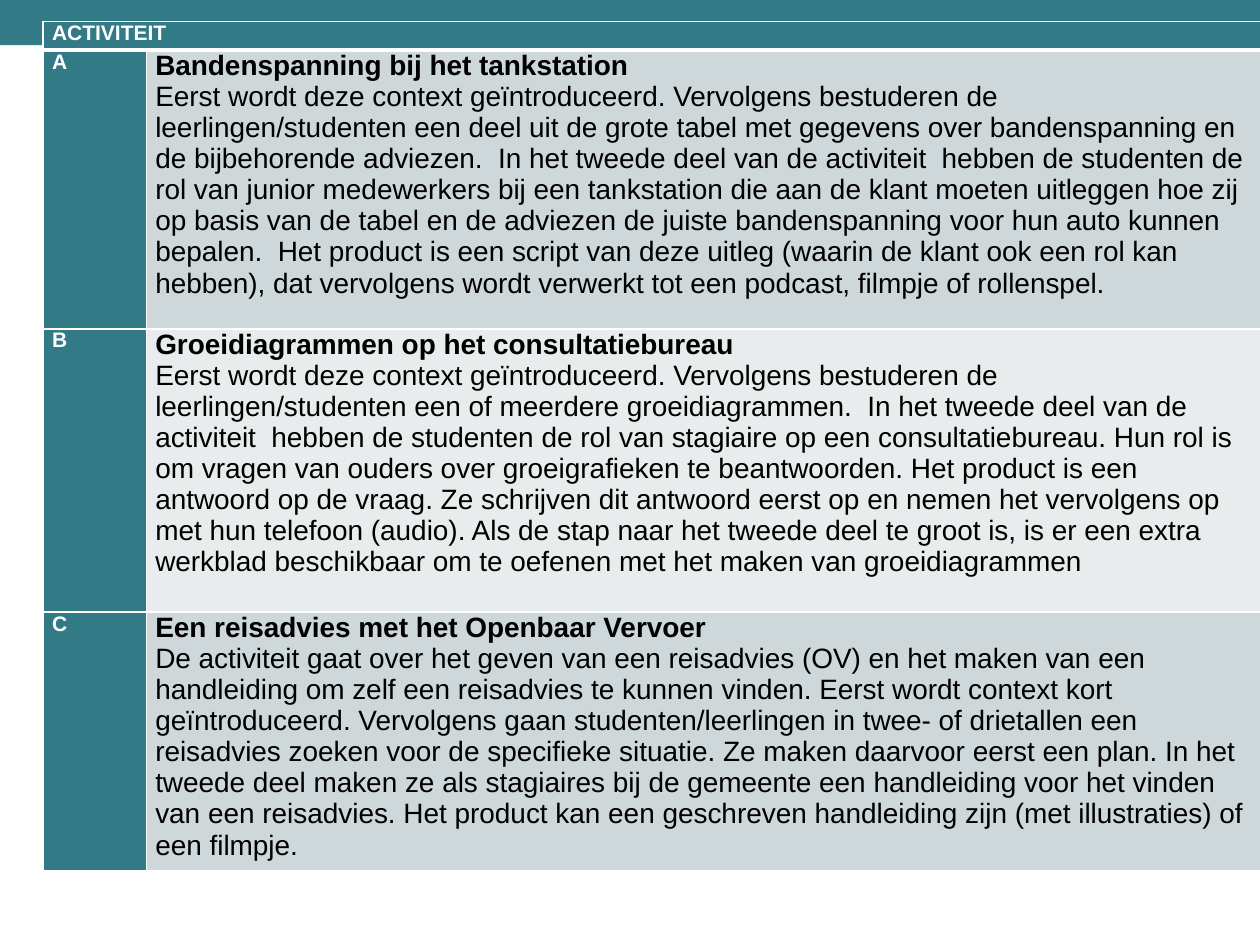
from dataclasses import dataclass

from lxml.etree import SubElement as Sub
from pptx import Presentation
from pptx.dml.color import RGBColor as Rgb
from pptx.enum.shapes import MSO_SHAPE as Shape
from pptx.oxml.ns import qn
from pptx.util import Cm, Pt


@dataclass(frozen=True)
class Theme:
    font: str = "Arial"
    small: int = 12
    large: int = 16
    teal: str = "327A86"
    white: str = "FFFFFF"
    black: str = "000000"
    bands: tuple = ("CED7D9", "E8ECED")
    thin: int = 1
    thick: int = 3


class Deck:
    def __init__(self, theme):
        self.theme = theme
        self.file = Presentation()
        self.file.slide_width = Cm(25.4)
        self.file.slide_height = Cm(19.05)
        self.slide = self.file.slides.add_slide(self.file.slide_layouts[6])

    def bar(self, left, top, width, height):
        bar = self.slide.shapes.add_shape(
            Shape.RECTANGLE, Cm(left), Cm(top), Cm(width), Cm(height))
        bar.shadow.inherit = False
        bar.fill.solid()
        bar.fill.fore_color.rgb = Rgb.from_string(self.theme.teal)
        bar.line.fill.background()

    def table(self, left, top, widths, heights):
        frame = self.slide.shapes.add_table(
            len(heights), len(widths), Cm(left), Cm(top),
            Cm(sum(widths)), Cm(sum(heights)))
        grid = frame.table
        for col, width in zip(grid.columns, widths):
            col.width = Cm(width)
        for row, height in zip(grid.rows, heights):
            row.height = Cm(height)
        return grid

    def edge(self, cell, side, width):
        line = Sub(cell._tc.get_or_add_tcPr(), qn(f"a:ln{side}"),
                   w=str(Pt(width)))
        fill = Sub(line, qn("a:solidFill"))
        Sub(fill, qn("a:srgbClr"), val=self.theme.white)

    def cell(self, cell, fill, top, bottom):
        thin = self.theme.thin
        for side, width in zip("LRTB", (thin, thin, top, bottom)):
            self.edge(cell, side, width)
        cell.fill.solid()
        cell.fill.fore_color.rgb = Rgb.from_string(fill)
        cell.margin_left = cell.margin_right = Cm(0.18)
        cell.margin_top = cell.margin_bottom = 0

    def text(self, cell, lines, size, color):
        frame = cell.text_frame
        frame.text = "\n".join(lines)
        for index, para in enumerate(frame.paragraphs):
            font = para.font
            font.name = self.theme.font
            font.size = Pt(size)
            font.bold = index == 0
            font.color.rgb = Rgb.from_string(color)


TASKS = [
    ("A", "Bandenspanning bij het tankstation",
     "Eerst wordt deze context geïntroduceerd. Vervolgens bestuderen de "
     "leerlingen/studenten een deel uit de grote tabel met gegevens over "
     "bandenspanning en de bijbehorende adviezen.  In het tweede deel van de "
     "activiteit  hebben de studenten de rol van junior medewerkers bij een "
     "tankstation die aan de klant moeten uitleggen hoe zij op basis van de "
     "tabel en de adviezen de juiste bandenspanning voor hun auto kunnen "
     "bepalen.  Het product is een script van deze uitleg (waarin de klant "
     "ook een rol kan hebben), dat vervolgens wordt verwerkt tot een podcast, "
     "filmpje of rollenspel."),
    ("B", "Groeidiagrammen op het consultatiebureau",
     "Eerst wordt deze context geïntroduceerd. Vervolgens bestuderen de "
     "leerlingen/studenten een of meerdere groeidiagrammen.  In het tweede "
     "deel van de activiteit  hebben de studenten de rol van stagiaire op een "
     "consultatiebureau. Hun rol is om vragen van ouders over groeigrafieken "
     "te beantwoorden. Het product is een antwoord op de vraag. Ze schrijven "
     "dit antwoord eerst op en nemen het vervolgens op met hun telefoon "
     "(audio). Als de stap naar het tweede deel te groot is, is er een extra "
     "werkblad beschikbaar om te oefenen met het maken van groeidiagrammen"),
    ("C", "Een reisadvies met het Openbaar Vervoer",
     "De activiteit gaat over het geven van een reisadvies (OV) en het maken "
     "van een handleiding om zelf een reisadvies te kunnen vinden. Eerst "
     "wordt context kort geïntroduceerd. Vervolgens gaan studenten/leerlingen "
     "in twee- of drietallen een reisadvies zoeken voor de specifieke "
     "situatie. Ze maken daarvoor eerst een plan. In het tweede deel maken ze "
     "als stagiaires bij de gemeente een handleiding voor het vinden van een "
     "reisadvies. Het product kan een geschreven handleiding zijn (met "
     "illustraties) of een filmpje."),
]


def main():
    theme = Theme()
    deck = Deck(theme)
    deck.bar(0, 0, 25.4, 0.91)
    grid = deck.table(0.87, 0.43, [2.08, 22.53], [0.58, 5.62, 5.71, 5.21])

    head = grid.cell(0, 0)
    head.merge(grid.cell(0, 1))
    for col in range(2):
        deck.cell(grid.cell(0, col), theme.teal, theme.thin, theme.thick)
    deck.text(head, ["ACTIVITEIT"], theme.small, theme.white)

    for row, (mark, title, body) in enumerate(TASKS, 1):
        label, story = grid.cell(row, 0), grid.cell(row, 1)
        top = theme.thick if row == 1 else theme.thin
        deck.cell(label, theme.teal, top, theme.thin)
        deck.cell(story, theme.bands[(row - 1) % 2], top, theme.thin)
        deck.text(label, [mark], theme.small, theme.white)
        deck.text(story, [title, body], theme.large, theme.black)

    deck.file.save("out.pptx")


if __name__ == "__main__":
    main()
